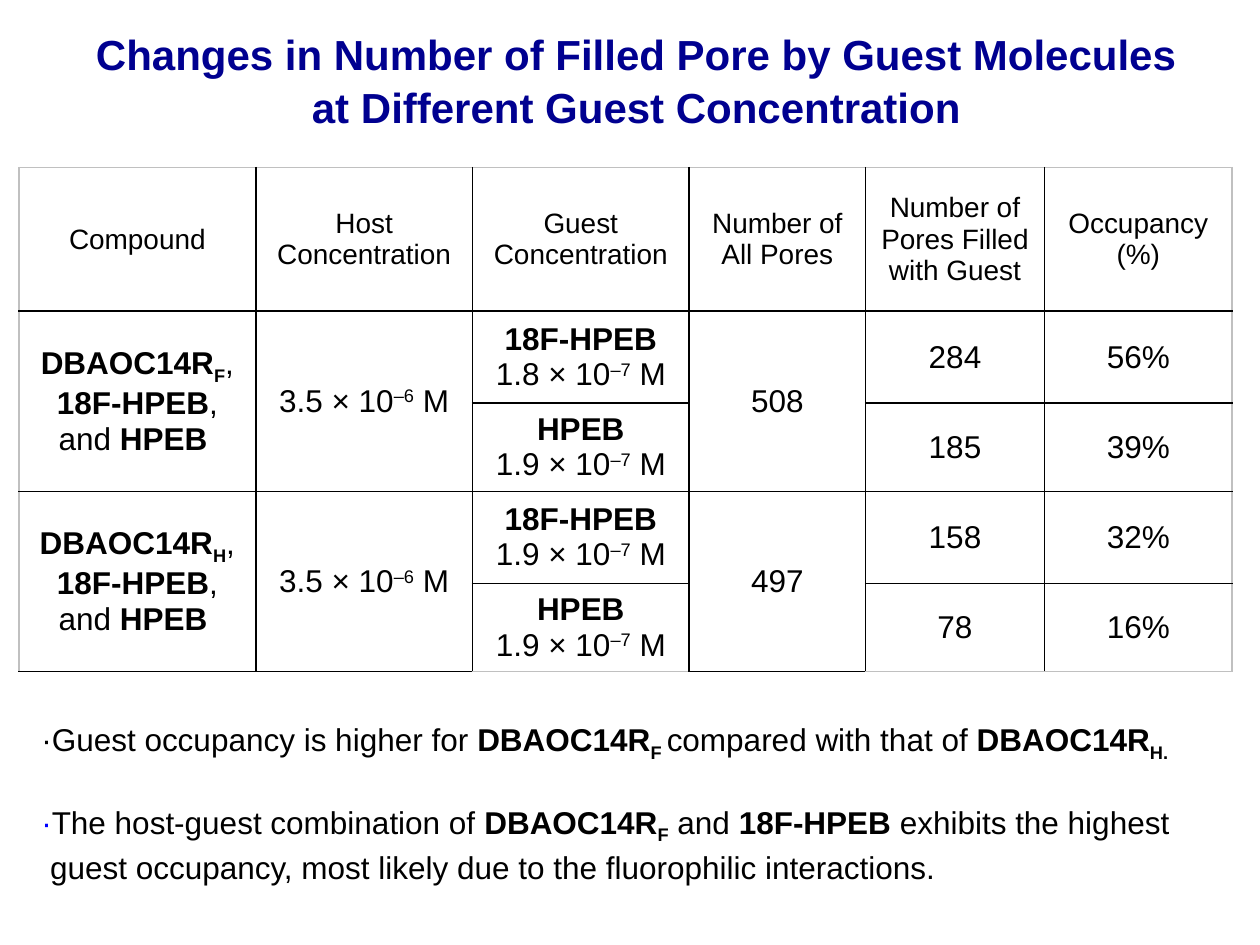
from typing import NamedTuple

from lxml import etree
from pptx import Presentation, util as u
from pptx.dml.color import RGBColor
from pptx.enum import text
from pptx.oxml.ns import qn

FONT = "Arial"
BLACK, NAVY, BLUE, GREY = "000000", "000090", "0000FF", "C0C0C0"
WIDTH, HEIGHT = u.Inches(10), u.Inches(7.5)
COLUMNS = [1.88, 1.72, 1.72, 1.4, 1.42, 1.49]
ROWS = [1.14, 0.73, 0.7, 0.73, 0.7]
HEADINGS = ["Compound", "Host Concentration", "Guest Concentration",
            "Number of All Pores", "Number of Pores Filled with Guest",
            "Occupancy (%)"]


class Piece(NamedTuple):
    words: str
    bold: bool = False
    baseline: int = 0  # percent, negative for a subscript
    color: str = BLACK


class Guest(NamedTuple):
    name: str
    concentration: str
    filled: int
    occupancy: str


class Host(NamedTuple):
    suffix: str
    pores: int
    guests: list[Guest]


HOSTS = [
    Host("F", 508, [Guest("18F-HPEB", "1.8", 284, "56%"),
                    Guest("HPEB", "1.9", 185, "39%")]),
    Host("H", 497, [Guest("18F-HPEB", "1.9", 158, "32%"),
                    Guest("HPEB", "1.9", 78, "16%")]),
]


def rgb(color: str) -> RGBColor:
    return RGBColor.from_string(color)


def compound(suffix: str) -> list[Piece]:
    return [Piece("DBAOC14R", True), Piece(suffix, True, -25)]


def molar(value: str, power: str) -> list[Piece]:
    return [Piece(f"{value} × 10"), Piece(power, baseline=30), Piece(" M")]


def write(paragraph, pieces: list[Piece], size: float = 18) -> None:
    """Fill a paragraph; a newline ending a piece becomes a line break."""
    for piece in pieces:
        run = paragraph.add_run()
        run.text = piece.words.rstrip("\n")
        run.font.name, run.font.size = FONT, u.Pt(size)
        run.font.bold = piece.bold
        run.font.color.rgb = rgb(piece.color)
        if piece.baseline:
            run.font._element.set("baseline", str(piece.baseline * 1000))
        if piece.words.endswith("\n"):
            paragraph.add_line_break()


def fill_cell(cell, lines: list[list[Piece]], size: float = 18) -> None:
    cell.vertical_anchor = text.MSO_ANCHOR.MIDDLE
    frame = cell.text_frame
    for index, pieces in enumerate(lines):
        paragraph = frame.add_paragraph() if index else frame.paragraphs[0]
        paragraph.alignment = text.PP_ALIGN.CENTER
        write(paragraph, pieces, size)


def set_borders(cell, row: int, column: int) -> None:
    """Black rules inside the grid, pale ones around it."""
    last_row, last_column = len(ROWS) - 1, len(COLUMNS) - 1
    pale = {"L": column == 0, "R": column == last_column,
            "T": row == 0, "B": row == last_row and column > 0}
    properties = cell._tc.get_or_add_tcPr()
    for side, is_pale in pale.items():
        line = etree.SubElement(properties, qn(f"a:ln{side}"), w=str(u.Pt(1)))
        solid = etree.SubElement(line, qn("a:solidFill"))
        etree.SubElement(solid, qn("a:srgbClr"), val=GREY if is_pale else BLACK)


def add_textbox(slide, left: float, top: float, width: float, height: float):
    """Place a wrapping text box by shares of the slide's size."""
    box = slide.shapes.add_textbox(int(WIDTH * left), int(HEIGHT * top),
                                   int(WIDTH * width), int(HEIGHT * height))
    box.text_frame.word_wrap = True
    return box.text_frame


def add_title(slide) -> None:
    heading = add_textbox(slide, 0.05, 0.02, 0.91, 0.12).paragraphs[0]
    heading.text = ("Changes in Number of Filled Pore by Guest Molecules\v"
                    "at Different Guest Concentration")
    heading.alignment = text.PP_ALIGN.CENTER
    heading.line_spacing = 1.06
    for run in heading.runs:
        run.font.name, run.font.size, run.font.bold = FONT, u.Pt(24), True
        run.font.color.rgb = rgb(NAVY)


def add_pore_table(slide) -> None:
    pores = slide.shapes.add_table(
        len(ROWS), len(COLUMNS), u.Inches(0.15), u.Inches(1.33),
        u.Inches(sum(COLUMNS)), u.Inches(sum(ROWS))).table
    pores.first_row = pores.horz_banding = False
    for column, width in zip(pores.columns, COLUMNS):
        column.width = u.Inches(width)
    for row, height in zip(pores.rows, ROWS):
        row.height = u.Inches(height)
    for row in range(len(ROWS)):
        for column in range(len(COLUMNS)):
            cell = pores.cell(row, column)
            set_borders(cell, row, column)
            cell.fill.background()

    for column, heading in enumerate(HEADINGS):
        fill_cell(pores.cell(0, column), [[Piece(heading)]], 16)

    # Each host spans the rows of its guests
    top = 1
    for host in HOSTS:
        mixture = compound(host.suffix) + [
            Piece(",\n"), Piece("18F-HPEB", True), Piece(",\n"),
            Piece("and "), Piece("HPEB ", True)]
        shared = {0: mixture, 1: molar("3.5", "–6"), 3: [Piece(str(host.pores))]}
        for column, pieces in shared.items():
            cell = pores.cell(top, column)
            cell.merge(pores.cell(top + len(host.guests) - 1, column))
            fill_cell(cell, [pieces])
        for row, guest in enumerate(host.guests, top):
            fill_cell(pores.cell(row, 2), [[Piece(guest.name, True)],
                                           molar(guest.concentration, "–7")])
            fill_cell(pores.cell(row, 4), [[Piece(str(guest.filled))]])
            fill_cell(pores.cell(row, 5), [[Piece(guest.occupancy)]])
        top += len(host.guests)


def add_findings(slide) -> None:
    findings = add_textbox(slide, 0.023, 0.753, 0.954, 0.216)
    higher = findings.paragraphs[0]
    write(higher, [Piece("·Guest occupancy is higher for "), *compound("F "),
                   Piece("compared with that of "), *compound("H.")])
    highest = findings.add_paragraph()
    highest.space_before = u.Pt(21)
    write(highest, [Piece("·", color=BLUE),
                    Piece("The host-guest combination of "), *compound("F"),
                    Piece(" and "), Piece("18F-HPEB ", True),
                    Piece("exhibits the highest")])
    reason = findings.add_paragraph()
    write(reason, [Piece(" guest occupancy, most likely due to the "
                         "fluorophilic interactions.")])
    for paragraph in findings.paragraphs:
        paragraph.line_spacing = 1.06


def main() -> None:
    deck = Presentation()
    deck.slide_width, deck.slide_height = WIDTH, HEIGHT
    slide = deck.slides.add_slide(deck.slide_layouts[6])
    add_title(slide)
    add_pore_table(slide)
    add_findings(slide)
    deck.save("out.pptx")


if __name__ == "__main__":
    main()
